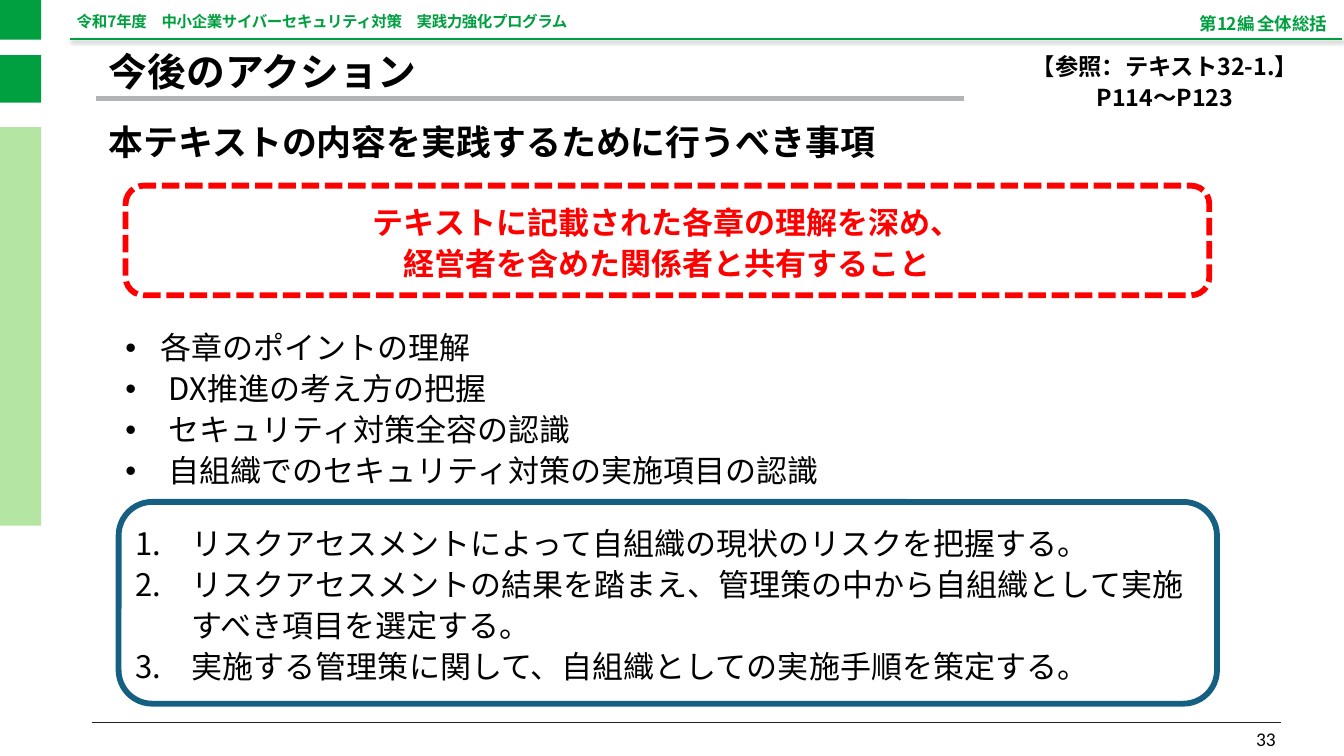
from lxml.etree import SubElement as Sub
from pptx import Presentation
from pptx.dml.color import RGBColor
from pptx.enum.dml import MSO_LINE as Dash
from pptx.enum.shapes import MSO_CONNECTOR as Conn, MSO_SHAPE as Shape
from pptx.enum.text import MSO_ANCHOR as Anchor, MSO_AUTO_SIZE as Auto, PP_ALIGN as Align
from pptx.oxml.ns import qn
from pptx.util import Pt

PX = 9144
GOTHIC = "Noto Sans CJK JP"
HUES = {
    "green": "009F40", "pale": "B4E5A2", "gray": "B2B3B5", "ink": "222222",
    "black": "000000", "white": "FFFFFF", "red": "FF0000", "blue": "156082",
}


def hue(name):
    return RGBColor.from_string(HUES[name])


def emu(*nums):
    return [n * PX for n in nums]


def mark(para, sign, hang):
    props = para._p.get_or_add_pPr()
    props.set("marL", str(hang * PX))
    props.set("indent", str(-hang * PX))
    if sign == "1.":
        Sub(props, qn("a:buFont"), typeface="+mj-lt")
        Sub(props, qn("a:buAutoNum"), type="arabicPeriod")
    else:
        Sub(props, qn("a:buFont"), typeface="Arial")
        Sub(props, qn("a:buChar"), char=sign)


def write(shape, lines, size, color="black", bold=False, align=Align.LEFT, anchor=Anchor.TOP,
          gap=1.1, face=GOTHIC, tight=0, sign=None, hangs=(), flush=False):
    frame = shape.text_frame
    frame.word_wrap = True
    frame.auto_size = Auto.NONE
    frame.vertical_anchor = anchor
    if flush:
        frame.margin_left = frame.margin_right = frame.margin_bottom = 0
        frame.margin_top = PX
    for i, line in enumerate(lines):
        para = frame.paragraphs[0] if i == 0 else frame.add_paragraph()
        if sign:
            mark(para, sign, hangs[i])
        para.alignment = align
        para.line_spacing = gap
        run = para.add_run()
        run.text = line
        font = run.font
        font.size = Pt(size)
        font.bold = bold
        font.name = face
        font.color.rgb = hue(color)
        props = run._r.get_or_add_rPr()
        Sub(props, qn("a:ea"), typeface=face)
        if tight:
            props.set("spc", str(tight))


def label(slide, box, lines, size, **style):
    write(slide.shapes.add_textbox(*emu(*box)), lines, size, **style)


def block(slide, box, kind, fill=None, line=None, dash=None):
    shape = slide.shapes.add_shape(kind, *emu(*box))
    shape.shadow.inherit = False
    if fill:
        shape.fill.solid()
        shape.fill.fore_color.rgb = hue(fill)
    else:
        shape.fill.background()
    if line:
        shape.line.color.rgb = hue(line)
        shape.line.width = Pt(6)
        shape.line.dash_style = dash
    else:
        shape.line.fill.background()
    return shape


def rule(slide, x, y, wide, color, width, shade=False):
    line = slide.shapes.add_connector(Conn.STRAIGHT, *emu(x, y, x + wide, y))
    line.line.color.rgb = hue(color)
    line.line.width = Pt(width)
    glow = Sub(line._element.spPr, qn("a:effectLst"))
    if shade:
        cast = Sub(glow, qn("a:outerShdw"), blurRad=str(Pt(4)), dist=str(Pt(3)),
                   dir="2700000", rotWithShape="0")
        tint = Sub(cast, qn("a:srgbClr"), val=HUES["black"])
        Sub(tint, qn("a:alpha"), val="40000")


def side(slide, x, y, wide):
    for top, high, fill in ((0, 57, "green"), (79, 68, "green"), (182, 571, "pale")):
        block(slide, (x, y + top, wide, high), Shape.RECTANGLE, fill)


def header(slide, x, y, wide):
    rule(slide, x, y + 56, wide, "green", 2, True)
    label(slide, (x + 10, y + 22, 1000, 22), ["令和7年度　中小企業サイバーセキュリティ対策　実践力強化プログラム"],
          16, color="green", bold=True, gap=Pt(15), tight=-40, flush=True)
    label(slide, (x + wide - 1022, y + 20, 1000, 29), ["第12編 全体総括"], 18, color="green", bold=True,
          align=Align.RIGHT, anchor=Anchor.MIDDLE, gap=0.9, tight=-40, flush=True)


def heading(slide, x, y, wide):
    rule(slide, x, y + 65, 1243, "gray", 6)
    title = slide.shapes.title
    title.left, title.top, title.width, title.height = emu(x + 8, y, wide, 61)
    write(title, ["今後のアクション"], 40, bold=True, anchor=Anchor.MIDDLE, gap=0.9)
    label(slide, (x + 1295, y - 10, 473, 93), ["【参照：テキスト32-1.】", "P114～P123"], 24,
          bold=True, align=Align.CENTER)
    label(slide, (x + 8, y + 100, 1634, 61), ["本テキストの内容を実践するために行うべき事項"], 36,
          bold=True, anchor=Anchor.MIDDLE, gap=0.9)


def body(slide, x, y, wide):
    goal = block(slide, (x + 10, y, wide - 21, 157), Shape.ROUNDED_RECTANGLE,
                 line="red", dash=Dash.SQUARE_DOT)
    write(goal, ["テキストに記載された各章の理解を深め、", "経営者を含めた関係者と共有すること"], 32,
          color="red", bold=True, align=Align.CENTER, anchor=Anchor.MIDDLE)
    points = ["各章のポイントの理解", "DX推進の考え方の把握", "セキュリティ対策全容の認識",
              "自組織でのセキュリティ対策の実施項目の認識"]
    label(slide, (x, y + 195, wide - 21, 239), points, 32, sign="•", hangs=(50, 62, 62, 62))
    steps = ["リスクアセスメントによって自組織の現状のリスクを把握する。",
             "リスクアセスメントの結果を踏まえ、管理策の中から自組織として実施すべき項目を選定する。",
             "実施する管理策に関して、自組織としての実施手順を策定する。"]
    plan = block(slide, (x, y + 453, wide, 289), Shape.ROUNDED_RECTANGLE, "white", "blue")
    write(plan, steps, 32, anchor=Anchor.MIDDLE, sign="1.", hangs=(81, 81, 81))


def footer(slide, x, y, wide):
    rule(slide, x, y, wide, "ink", 1)
    label(slide, (x + wide - 431, y - 13, 433, 58), ["33"], 20, align=Align.RIGHT,
          anchor=Anchor.BOTTOM, gap=1.0, face="Calibri")


def main():
    deck = Presentation()
    deck.slide_width, deck.slide_height = emu(1926, 1083)
    slide = deck.slides.add_slide(deck.slide_layouts[5])
    side(slide, 0, 0, 59)
    header(slide, 100, 0, 1823)
    heading(slide, 138, 76, 1761)
    body(slide, 170, 266, 1574)
    footer(slide, 132, 1035, 1704)
    deck.save("out.pptx")


if __name__ == "__main__":
    main()
